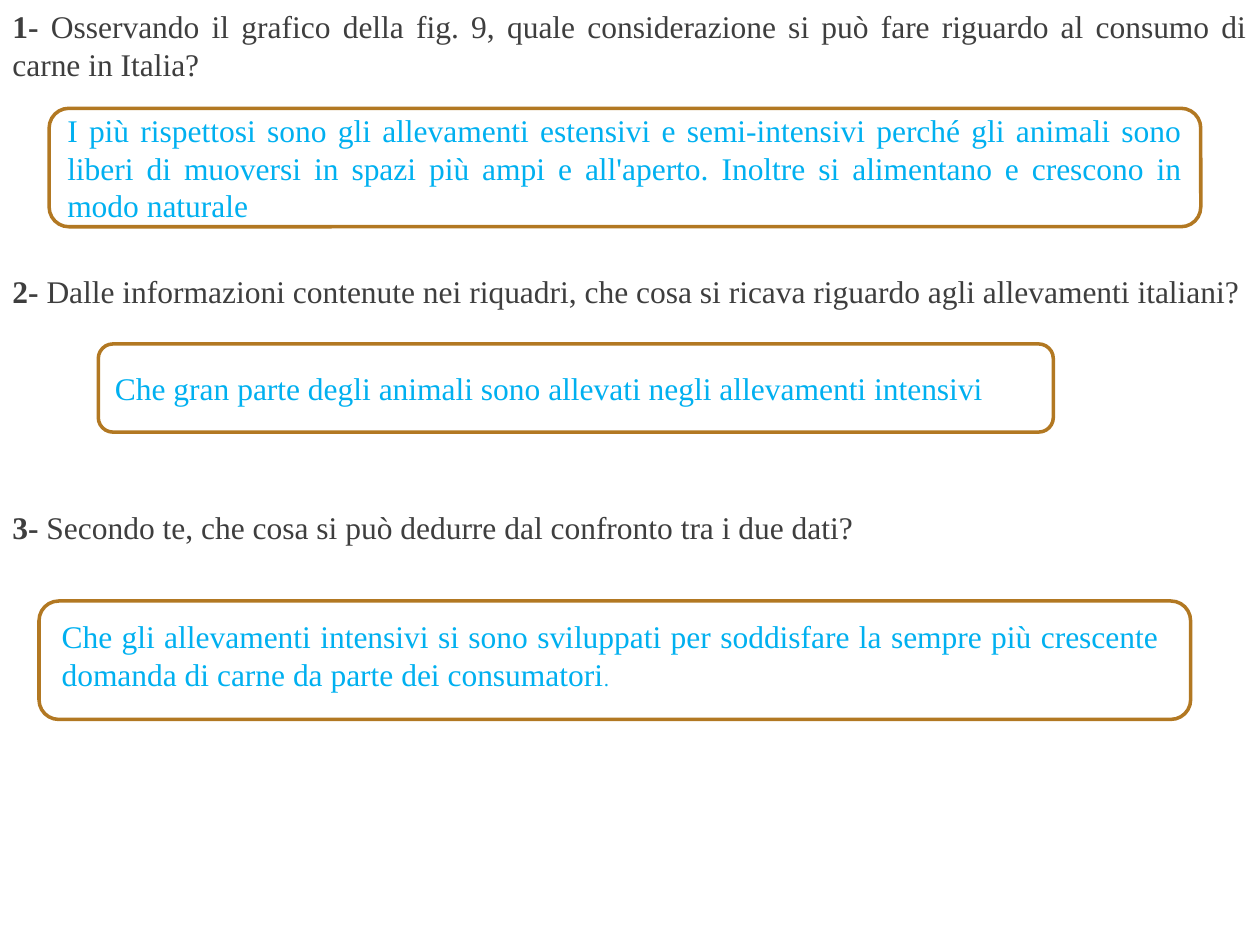
import pptx
import pptx.util
import pptx.dml.color
import pptx.enum.shapes
import pptx.enum.text

Inches = pptx.util.Inches
COLORS = {"question": "3E3E3E", "answer": "00B0F0", "border": "B27822", "paper": "FFFFFF"}


class Worksheet:
    """Style and current slide of a question-and-answer worksheet."""

    font = "Times New Roman"
    size = 18

    def __init__(self, slide):
        self.slide = slide

    def color(self, name):
        return pptx.dml.color.RGBColor.from_string(COLORS[name])

    def add_runs(self, frame, runs, color, wrap=True):
        frame.word_wrap = wrap
        frame.vertical_anchor = pptx.enum.text.MSO_ANCHOR.MIDDLE
        paragraph = frame.paragraphs[0]
        paragraph.alignment = pptx.enum.text.PP_ALIGN.JUSTIFY
        for words, size, bold in runs:
            run = paragraph.add_run()
            run.text = words
            run.font.name = self.font
            run.font.size = pptx.util.Pt(size)
            run.font.bold = bold
            run.font.color.rgb = self.color(color)

    def text(self, area, runs, color, wrap=True):
        box = self.slide.shapes.add_textbox(*map(Inches, area))
        self.add_runs(box.text_frame, runs, color, wrap)
        box.text_frame.auto_size = pptx.enum.text.MSO_AUTO_SIZE.SHAPE_TO_FIT_TEXT

    def question(self, number, words, area, wrap=False):
        runs = [(f"{number}- ", self.size, True), (words, self.size, False)]
        self.text(area, runs, "question", wrap)

    def answer_box(self, area, words=""):
        box = self.slide.shapes.add_shape(
            pptx.enum.shapes.MSO_SHAPE.ROUNDED_RECTANGLE, *map(Inches, area))
        box.shadow.inherit = False
        box.fill.solid()
        box.fill.fore_color.rgb = self.color("paper")
        box.line.color.rgb = self.color("border")
        box.line.width = pptx.util.Pt(2)
        if words:
            self.add_runs(box.text_frame, [(words, self.size, False)], "answer")


def main():
    deck = pptx.Presentation()
    deck.slide_width, deck.slide_height = Inches(10), Inches(7.5)
    sheet = Worksheet(deck.slides.add_slide(deck.slide_layouts[6]))

    sheet.question(1, "Osservando il grafico della fig. 9, quale considerazione si può fare "
                   "riguardo al consumo di carne in Italia?", (0, 0, 10, 0.71), wrap=True)
    sheet.answer_box((0.39, 0.86, 9.14, 0.94),
                     "I più rispettosi sono gli allevamenti estensivi e semi-intensivi perché "
                     "gli animali sono liberi di muoversi in spazi più ampi e all'aperto. "
                     "Inoltre si alimentano e crescono in modo naturale")

    sheet.question(2, "Dalle informazioni contenute nei riquadri, che cosa si ricava riguardo "
                   "agli allevamenti italiani?", (0, 2.11, 10.05, 0.4))
    sheet.answer_box((0.78, 2.73, 7.58, 0.7),
                     "Che gran parte degli animali sono allevati negli allevamenti intensivi")

    sheet.question(3, "Secondo te, che cosa si può dedurre dal confronto tra i due dati?",
                   (0, 3.98, 6.96, 0.4))
    sheet.answer_box((0.31, 4.77, 9.14, 0.94))
    sheet.text((0.39, 4.84, 8.91, 0.71),
               [("Che gli allevamenti intensivi si sono sviluppati per soddisfare la sempre più "
                 "crescente domanda di carne da parte dei consumatori", sheet.size, False),
                (".", 12, False)], "answer")

    deck.save("out.pptx")


if __name__ == "__main__":
    main()
